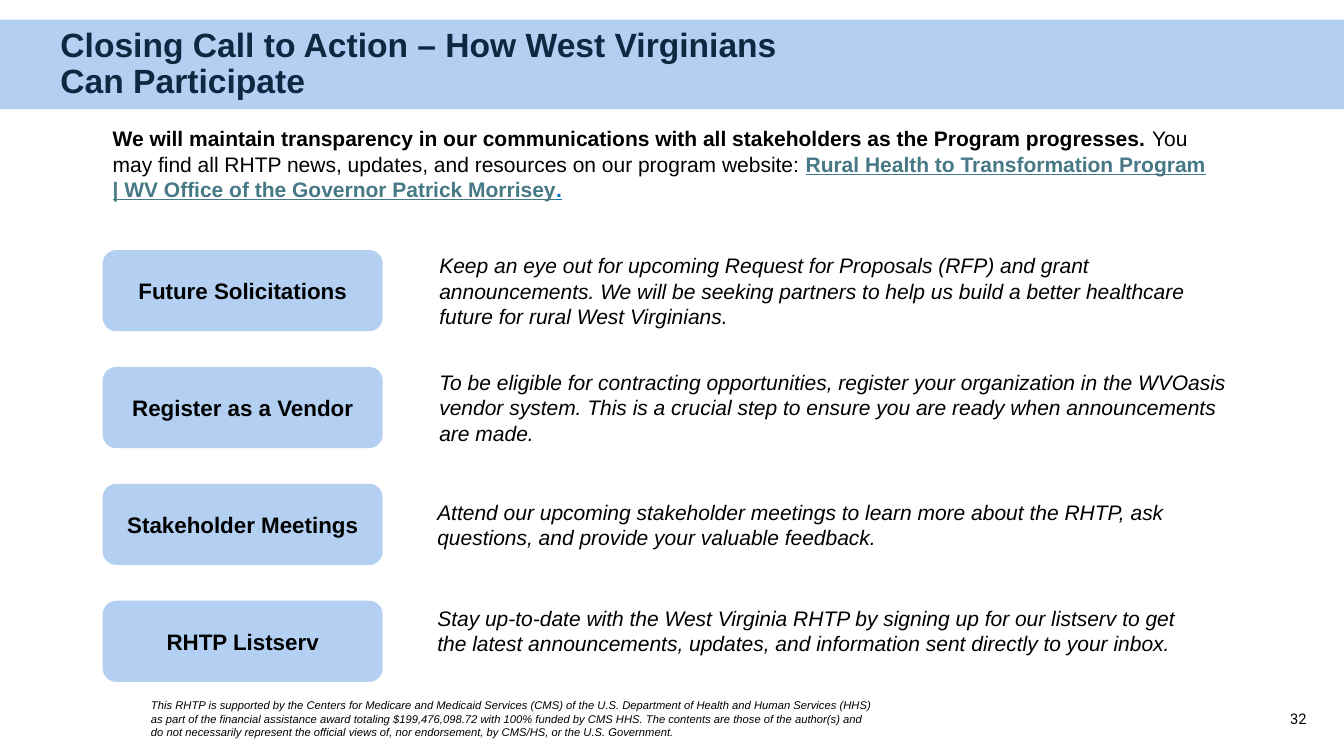
from pptx import Presentation
from pptx.dml.color import RGBColor
from pptx.enum import shapes, text
from pptx.util import Pt

MID, TOP = text.MSO_ANCHOR.MIDDLE, text.MSO_ANCHOR.TOP
LEFT, MID_X, RIGHT = text.PP_ALIGN.LEFT, text.PP_ALIGN.CENTER, text.PP_ALIGN.RIGHT
BLUE, NAVY, BLACK, LINK, DOT = "B3D0F3", "0E2841", "000000", "467886", "0070C0"


def color(code):
    return RGBColor.from_string(code)


class Page:
    """Holds the current slide and its text style."""

    def __init__(self, slide, face):
        self.slide, self.face = slide, face

    def style(self, run, size, ink=BLACK, bold=False, slant=False, line=False, face=None):
        font = run.font
        font.name, font.size = face or self.face, Pt(size)
        font.bold, font.italic, font.underline = bold, slant, line
        font.color.rgb = color(ink)

    def fill(self, shape, words, size, anchor=TOP, align=LEFT, **look):
        """Set one paragraph; words is a string or a list of (string, look) runs."""
        frame = shape.text_frame
        frame.word_wrap, frame.auto_size = True, text.MSO_AUTO_SIZE.NONE
        frame.vertical_anchor = anchor
        para = frame.paragraphs[0]
        para.alignment = align
        for part, extra in [(words, {})] if isinstance(words, str) else words:
            run = para.add_run()
            run.text = part
            self.style(run, size, **{**look, **extra})
        return para

    def title(self, box, words, size, **look):
        shape = self.slide.shapes.title
        shape.left, shape.top, shape.width, shape.height = map(Pt, box)
        self.fill(shape, words, size, MID, **look).line_spacing = 0.9

    def note(self, box, words, size, **look):
        shape = self.slide.shapes.add_textbox(*map(Pt, box))
        self.fill(shape, words, size, **look)

    def block(self, box, kind):
        shape = self.slide.shapes.add_shape(kind, *map(Pt, box))
        shape.shadow.inherit = False
        shape.fill.solid()
        shape.fill.fore_color.rgb = color(BLUE)
        shape.line.fill.background()
        return shape

    def band(self, box):
        """Draw a plain strip behind the title."""
        strip = self.block(box, shapes.MSO_SHAPE.RECTANGLE)
        self.slide.shapes.title.element.addprevious(strip.element)

    def label(self, box, words, size):
        shape = self.block(box, shapes.MSO_SHAPE.ROUNDED_RECTANGLE)
        self.fill(shape, words, size, MID, MID_X, bold=True)


INTRO = [
    ("We will maintain transparency in our communications with all stakeholders "
     "as the Program progresses. ", {"bold": True}),
    ("You may find all RHTP news, updates, and resources on our program website: ", {}),
    ("Rural Health to Transformation Program | WV Office of the Governor Patrick Morrisey",
     {"ink": LINK, "bold": True, "line": True}),
    (".", {"ink": DOT, "bold": True, "line": True}),
]
# label, text, text left, text width, text height, anchor
STEPS = [
    ("Future Solicitations",
     "Keep an eye out for upcoming Request for Proposals (RFP) and grant announcements. "
     "We will be seeking partners to help us build a better healthcare future for rural "
     "West Virginians.", 306.7, 580, 58, MID),
    ("Register as a Vendor",
     "To be eligible for contracting opportunities, register your organization in the "
     "WVOasis vendor system. This is a crucial step to ensure you are ready when "
     "announcements are made.", 306.7, 580, 58, MID),
    ("Stakeholder Meetings",
     "Attend our upcoming stakeholder meetings to learn more about the RHTP, ask "
     "questions, and provide your valuable feedback.", 305.3, 571, 58, MID),
    ("RHTP Listserv",
     "Stay up-to-date with the West Virginia RHTP by signing up for our listserv to get "
     "the latest announcements, updates, and information sent directly to your inbox.",
     305.3, 564, 44, TOP),
]
FUNDING = (
    "This RHTP is supported by the Centers for Medicare and Medicaid Services (CMS) of the "
    "U.S. Department of Health and Human Services (HHS) as part of the financial assistance "
    "award totaling $199,476,098.72 with 100% funded by CMS HHS. The contents are those of "
    "the author(s) and do not necessarily represent the official views of, nor endorsement, "
    "by CMS/HS, or the U.S. Government."
)


def main():
    deck = Presentation()
    deck.slide_width, deck.slide_height = Pt(960), Pt(540)
    page = Page(deck.slides.add_slide(deck.slide_layouts[5]), "Arial")

    page.band((0, 14, 960, 64))
    page.title((36, 14, 570, 64.5),
               "Closing Call to Action – How West Virginians Can Participate",
               24, ink=NAVY, bold=True)
    page.note((73.4, 86.4, 795.6, 42), INTRO, 15)

    first, pitch = 178.6, 83.5
    for i, (name, words, left, wide, high, anchor) in enumerate(STEPS):
        top = first + i * pitch
        page.label((73.4, top, 200, 58), name, 16)
        page.note((left, top, wide, high), words, 15, anchor=anchor, slant=True)

    page.note((100.8, 495.4, 534, 36), FUNDING, 8, slant=True)
    page.note((716.4, 499, 224, 29), "32", 10.5, anchor=MID, align=RIGHT, face="Roboto")
    deck.save("out.pptx")


if __name__ == "__main__":
    main()
